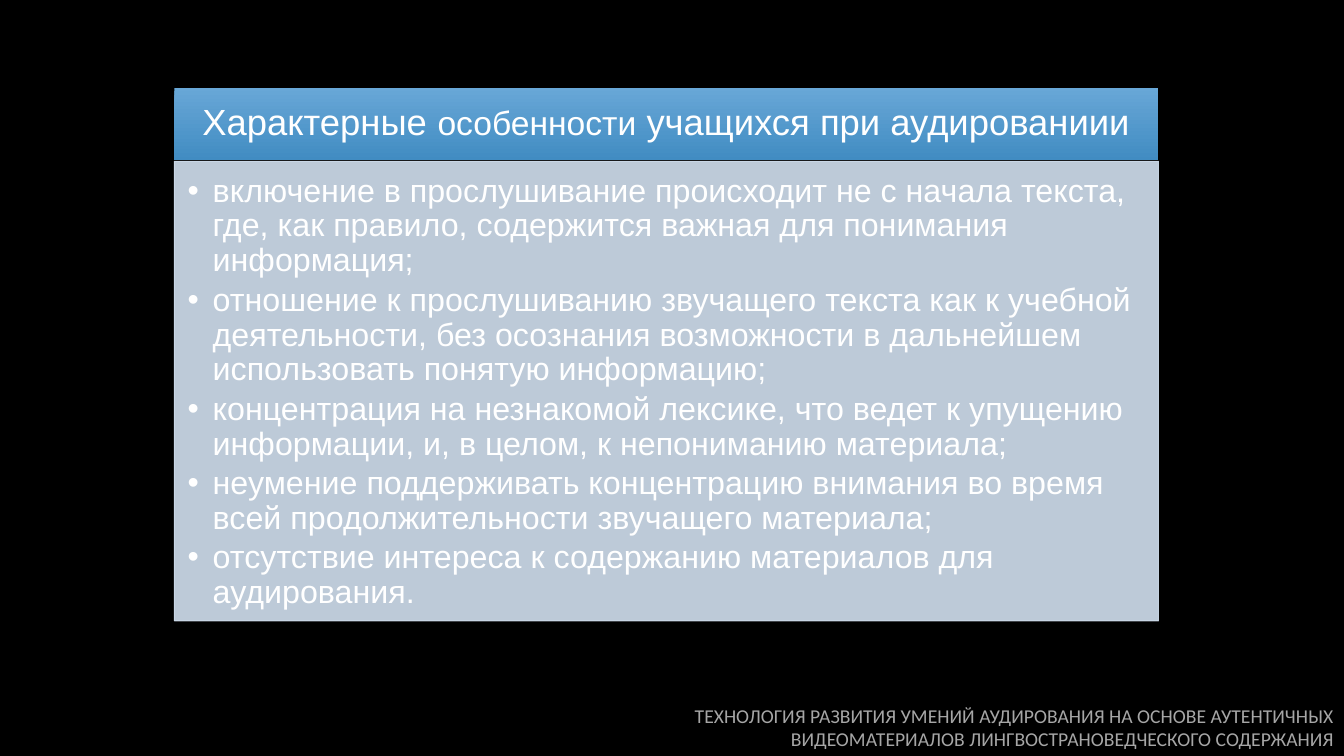
from pptx import Presentation
from pptx import util as u
from pptx.dml.color import RGBColor
from pptx.enum import text
from pptx.oxml import ns
from lxml import etree

COLORS = {
    "background": "000000",
    "header top": "68A7D7",
    "header bottom": "418CC2",
    "panel": "D2E1F0",
    "text": "FFFFFF",
    "footer": "A6A6A6",
}
HEADING = [("Характерные ", 26), ("особенности", 24), (" учащихся при аудированиии", 26)]
FEATURES = [
    "включение в прослушивание происходит не с начала текста, где, как правило, "
    "содержится важная для понимания информация;",
    "отношение к прослушиванию звучащего текста как к учебной деятельности, "
    "без осознания возможности в дальнейшем использовать понятую информацию;",
    "концентрация на незнакомой лексике, что ведет к упущению информации, и, "
    "в целом, к непониманию материала;",
    "неумение поддерживать концентрацию внимания во время всей продолжительности "
    "звучащего материала;",
    "отсутствие интереса к содержанию материалов для аудирования.",
]
FOOTER = ("ТЕХНОЛОГИЯ РАЗВИТИЯ УМЕНИЙ АУДИРОВАНИЯ НА "
          "ОСНОВЕ АУТЕНТИЧНЫХ ВИДЕОМАТЕРИАЛОВ ЛИНГВОСТРАНОВЕДЧЕСКОГО СОДЕРЖАНИЯ")


def color(name):
    return RGBColor.from_string(COLORS[name])


class SlideBuilder:
    def __init__(self, deck):
        self.page = deck.slides.add_slide(deck.slide_layouts[1])
        fill = self.page.background.fill
        fill.solid()
        fill.fore_color.rgb = color("background")

    def place(self, box, area, insets, anchor):
        box.left, box.top, box.width, box.height = map(u.Inches, area)
        frame = box.text_frame
        frame.word_wrap = True
        frame.auto_size = text.MSO_AUTO_SIZE.NONE
        frame.vertical_anchor = anchor
        (frame.margin_left, frame.margin_top,
         frame.margin_right, frame.margin_bottom) = map(u.Inches, insets)
        return frame

    def style(self, span, size, name="text", font="Arial"):
        span.font.size = u.Pt(size)
        span.font.name = font
        span.font.color.rgb = color(name)

    def header(self, parts, area):
        box = self.page.shapes.title
        frame = self.place(box, area, (0.2, 0.12, 0.2, 0.12), text.MSO_ANCHOR.MIDDLE)
        box.fill.gradient()
        box.fill.gradient_angle = 270
        for stop, name in zip(box.fill.gradient_stops, ("header top", "header bottom")):
            stop.color.rgb = color(name)
        para = frame.paragraphs[0]
        para.alignment = text.PP_ALIGN.CENTER
        para.line_spacing = 0.9
        for words, size in parts:
            span = para.add_run()
            span.text = words
            self.style(span, size)

    def bullets(self, items, area):
        box = self.page.placeholders[1]
        frame = self.place(box, area, (0.13, 0.13, 0.18, 0.2), text.MSO_ANCHOR.TOP)
        box.fill.solid()
        box.fill.fore_color.rgb = color("panel")
        box.line.color.rgb = color("panel")
        box.line.width = u.Pt(0.75)
        for shade in box._element.spPr.iter(ns.qn("a:srgbClr")):
            etree.SubElement(shade, ns.qn("a:alpha"), val="90000")
        frame.text = "\n".join(items)
        for para in frame.paragraphs:
            para.level = 1
            para.line_spacing = 0.9
            para.space_before = u.Pt(0)
            para.space_after = u.Pt(3.4)
            props = para._p.get_or_add_pPr()
            props.set("marL", str(u.Inches(0.25)))
            props.set("indent", str(u.Inches(-0.25)))
            etree.SubElement(props, ns.qn("a:buFont"), typeface="Arial")
            etree.SubElement(props, ns.qn("a:buChar"), char="•")
            self.style(para.runs[0], 23)

    def footer(self, words, area):
        box = self.page.shapes.add_textbox(*map(u.Inches, area))
        frame = self.place(box, area, (0.1, 0.05, 0.1, 0.05), text.MSO_ANCHOR.TOP)
        para = frame.paragraphs[0]
        para.text = words
        para.alignment = text.PP_ALIGN.RIGHT
        self.style(para.runs[0], 14, "footer", "Calibri")


def main():
    deck = Presentation()
    deck.slide_width, deck.slide_height = u.Inches(13.33), u.Inches(7.5)
    builder = SlideBuilder(deck)
    # Heading bar and the list panel under it
    builder.header(HEADING, (1.73, 0.87, 9.76, 0.72))
    builder.bullets(FEATURES, (1.73, 1.6, 9.76, 4.56))
    # Topic of the talk in the bottom corner
    builder.footer(FOOTER, (5.07, 6.93, 8.26, 0.57))
    deck.save("out.pptx")


if __name__ == "__main__":
    main()
